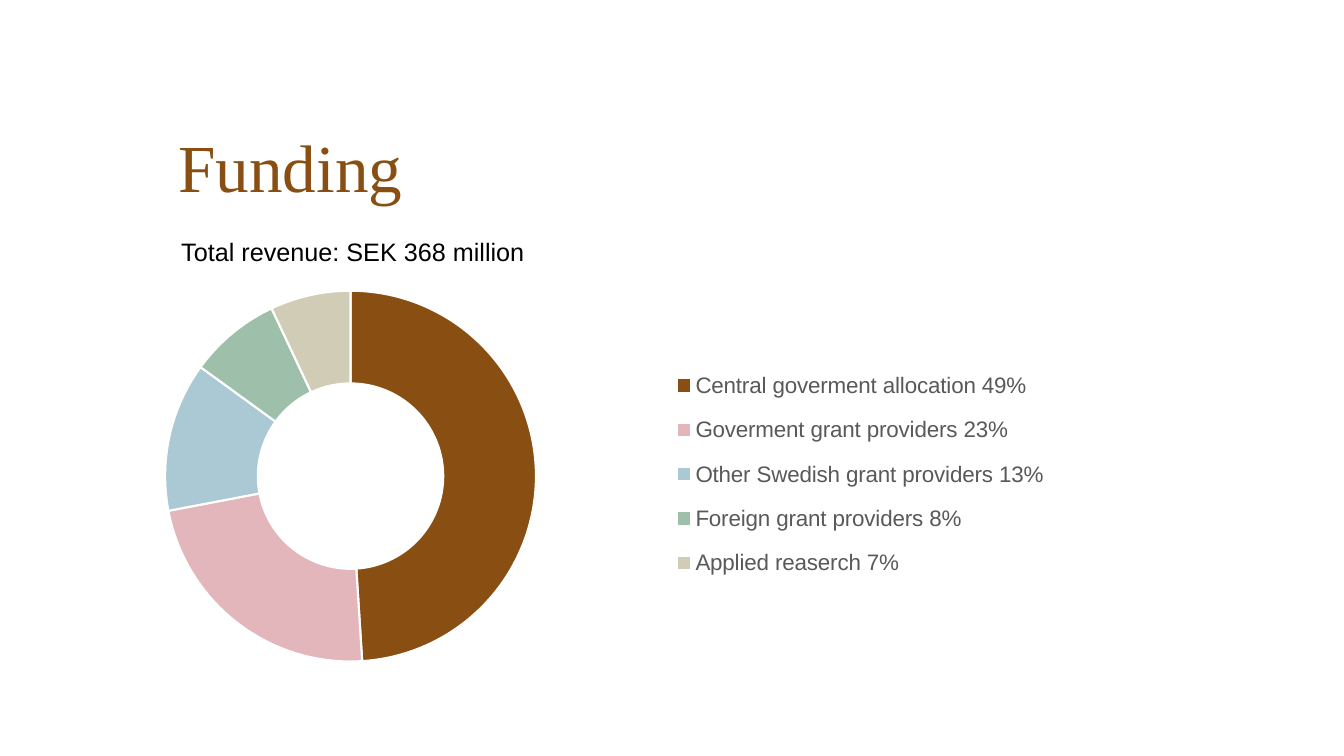
from dataclasses import dataclass

import lxml.etree
import pptx
import pptx.chart.data
import pptx.dml.color
import pptx.enum.chart
import pptx.enum.text
import pptx.oxml
import pptx.oxml.ns
import pptx.util

Pt = pptx.util.Pt


@dataclass(frozen=True)
class Theme:
    brown: str = "894E11"
    pink: str = "E3B6BB"
    blue: str = "ABC9D4"
    green: str = "9EC0AA"
    sand: str = "D0CCB6"
    white: str = "FFFFFF"
    black: str = "000000"
    grey: str = "595959"
    serif: str = "Times New Roman"
    sans: str = "Arial"
    title_size: float = 48
    body_size: float = 18
    legend_size: float = 16
    chart_size: float = 10


@dataclass(frozen=True)
class Box:
    left: float
    top: float
    width: float
    height: float


@dataclass(frozen=True)
class TextItem:
    text: str
    box: Box
    font: str
    size: float
    color: str
    insets: tuple[float, float, float, float]
    anchor: pptx.enum.text.MSO_ANCHOR
    line_spacing: float = 1.0


@dataclass(frozen=True)
class Source:
    label: str
    share: int
    color: str


THEME = Theme()

TEXTS = [
    TextItem("Funding", Box(127.4, 28.1, 694.8, 141.8), THEME.serif,
             THEME.title_size, THEME.brown, (0, 0, 0, 22.3),
             pptx.enum.text.MSO_ANCHOR.BOTTOM, 0.9),
    TextItem("Total revenue: SEK 368 million", Box(122.4, 165.6, 280, 28.8),
             THEME.sans, THEME.body_size, THEME.black, (7.2, 3.6, 7.2, 3.6),
             pptx.enum.text.MSO_ANCHOR.TOP),
]

SOURCES = [
    Source("Central goverment allocation", 49, THEME.brown),
    Source("Goverment grant providers", 23, THEME.pink),
    Source("Other Swedish grant providers", 13, THEME.blue),
    Source("Foreign grant providers", 8, THEME.green),
    Source("Applied reaserch", 7, THEME.sand),
]

CHART = Box(22.3, 194.4, 735.8, 288.7)
# Places inside the chart, as fractions of its size
RING = Box(0.13, 0.04, 0.36, 0.93)
LEGEND = Box(0.62, 0.2, 0.37, 0.6)
HOLE_PERCENT = 49


def rgb(color: str) -> pptx.dml.color.RGBColor:
    return pptx.dml.color.RGBColor.from_string(color)


def set_font(font, name: str, size: float, color: str) -> None:
    font.name = name
    font.size = Pt(size)
    font.color.rgb = rgb(color)


def add_text(s, item: TextItem) -> None:
    b = item.box
    sp = s.shapes.add_textbox(Pt(b.left), Pt(b.top), Pt(b.width), Pt(b.height))
    tf = sp.text_frame
    tf.word_wrap = True
    tf.vertical_anchor = item.anchor
    (tf.margin_left, tf.margin_top,
     tf.margin_right, tf.margin_bottom) = map(Pt, item.insets)
    p = tf.paragraphs[0]
    p.line_spacing = item.line_spacing
    r = p.add_run()
    r.text = item.text
    set_font(r.font, item.font, item.size, item.color)


def layout_xml(box: Box, inner: bool) -> lxml.etree.ElementBase:
    target = '<c:layoutTarget val="inner"/>' if inner else ""
    return pptx.oxml.parse_xml(
        f'<c:layout {pptx.oxml.ns.nsdecls("c")}><c:manualLayout>{target}'
        '<c:xMode val="edge"/><c:yMode val="edge"/>'
        f'<c:x val="{box.left}"/><c:y val="{box.top}"/>'
        f'<c:w val="{box.width}"/><c:h val="{box.height}"/>'
        '</c:manualLayout></c:layout>')


def place(parent, box: Box, inner: bool, index: int) -> None:
    for old in parent.findall(pptx.oxml.ns.qn("c:layout")):
        parent.remove(old)
    parent.insert(index, layout_xml(box, inner))


def add_funding_chart(s, box: Box, sources: list[Source]) -> None:
    data = pptx.chart.data.CategoryChartData()
    data.categories = [f"{src.label} {src.share}%" for src in sources]
    data.add_series("Series 1", [src.share for src in sources])
    chart = s.shapes.add_chart(
        pptx.enum.chart.XL_CHART_TYPE.DOUGHNUT, Pt(box.left), Pt(box.top),
        Pt(box.width), Pt(box.height), data).chart
    chart.has_title = False
    set_font(chart.font, THEME.sans, THEME.chart_size, THEME.black)

    # Ring segments
    plot = chart.plots[0]
    plot.vary_by_categories = True
    plot.has_data_labels = False
    for i, src in enumerate(sources):
        fmt = plot.series[0].points[i].format
        fmt.fill.solid()
        fmt.fill.fore_color.rgb = rgb(src.color)
        fmt.line.color.rgb = rgb(THEME.white)
        fmt.line.width = Pt(1.5)
    area = chart.element.find(".//" + pptx.oxml.ns.qn("c:plotArea"))
    area.find(".//" + pptx.oxml.ns.qn("c:holeSize")).set("val", str(HOLE_PERCENT))
    place(area, RING, True, 0)

    # Legend
    chart.has_legend = True
    legend = chart.legend
    legend.position = pptx.enum.chart.XL_LEGEND_POSITION.RIGHT
    legend.include_in_layout = False
    set_font(legend.font, THEME.sans, THEME.legend_size, THEME.grey)
    place(chart.element.find(".//" + pptx.oxml.ns.qn("c:legend")), LEGEND, False, 1)


def main() -> None:
    prs = pptx.Presentation()
    prs.slide_width, prs.slide_height = Pt(960), Pt(540)
    s = prs.slides.add_slide(prs.slide_layouts[6])
    s.background.fill.solid()
    s.background.fill.fore_color.rgb = rgb(THEME.white)

    # Chart below, title and total above it
    add_funding_chart(s, CHART, SOURCES)
    for item in TEXTS:
        add_text(s, item)
    prs.save("out.pptx")


if __name__ == "__main__":
    main()
